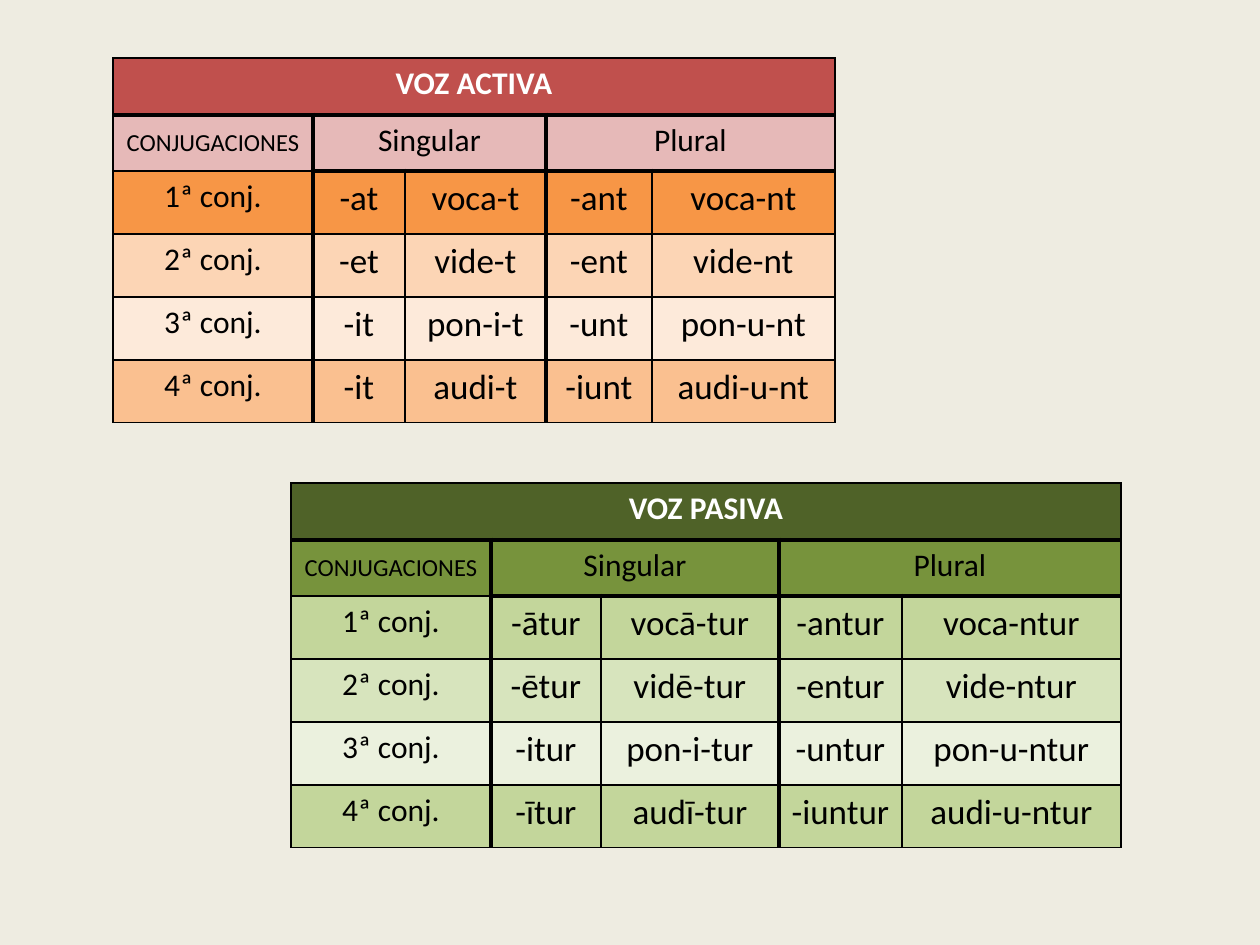
from dataclasses import dataclass

from lxml import etree
from pptx import Presentation
from pptx.dml.color import RGBColor
from pptx.enum.text import MSO_ANCHOR, PP_ALIGN
from pptx.oxml.ns import qn
from pptx.util import Emu, Pt

PX = 914400 // 126
CENTER = PP_ALIGN.CENTER
MIDDLE = MSO_ANCHOR.MIDDLE
FONT = "Calibri"
THIN, THICK = 1, 3
ROW_HEIGHTS = [57, 56, 63, 63, 63, 63]
HEADINGS = ["CONJUGACIONES", "Singular", "", "Plural", ""]

BLACK = RGBColor(0x00, 0x00, 0x00)
WHITE = RGBColor(0xFF, 0xFF, 0xFF)
CREAM = RGBColor(0xEE, 0xEC, 0xE1)
RED = RGBColor(0xC0, 0x50, 0x4D)
PINK = RGBColor(0xE6, 0xB9, 0xB8)
ORANGE = RGBColor(0xF7, 0x96, 0x46)
PEACH = RGBColor(0xFC, 0xD5, 0xB5)
PALE_PEACH = RGBColor(0xFD, 0xEA, 0xDA)
APRICOT = RGBColor(0xFA, 0xC0, 0x90)
DARK_GREEN = RGBColor(0x4F, 0x62, 0x28)
GREEN = RGBColor(0x77, 0x93, 0x3C)
LIGHT_GREEN = RGBColor(0xC3, 0xD6, 0x9B)
PALE_GREEN = RGBColor(0xD7, 0xE4, 0xBD)
MIST_GREEN = RGBColor(0xEB, 0xF1, 0xDE)


@dataclass
class Voice:
    title: str
    left: int
    top: int
    col_widths: list[int]
    row_fills: list[RGBColor]
    endings: list[list[str]]


VOICES = [
    Voice("VOZ ACTIVA", 113, 58, [200, 92, 141, 106, 183],
          [RED, PINK, ORANGE, PEACH, PALE_PEACH, APRICOT],
          [["-at", "voca-t", "-ant", "voca-nt"],
           ["-et", "vide-t", "-ent", "vide-nt"],
           ["-it", "pon-i-t", "-unt", "pon-u-nt"],
           ["-it", "audi-t", "-iunt", "audi-u-nt"]]),
    Voice("VOZ PASIVA", 291, 483, [200, 110, 178, 123, 219],
          [DARK_GREEN, GREEN, LIGHT_GREEN, PALE_GREEN, MIST_GREEN, LIGHT_GREEN],
          [["-ātur", "vocā-tur", "-antur", "voca-ntur"],
           ["-ētur", "vidē-tur", "-entur", "vide-ntur"],
           ["-itur", "pon-i-tur", "-untur", "pon-u-ntur"],
           ["-ītur", "audī-tur", "-iuntur", "audi-u-ntur"]]),
]


def px(n: int) -> Emu:
    return Emu(n * PX)


def vertical_weight(x: int, row: int) -> int:
    """Thick lines set off the singular and plural groups."""
    return THICK if x in (1, 3) and row > 0 else THIN


def horizontal_weight(y: int, col: int) -> int:
    """Thick lines close the title and the number headings."""
    return THICK if y == 1 or (y == 2 and col > 0) else THIN


def add_borders(cell, row: int, col: int) -> None:
    right = col + (cell.span_width if cell.is_merge_origin else 1)
    weights = {
        "a:lnL": vertical_weight(col, row),
        "a:lnR": vertical_weight(right, row),
        "a:lnT": horizontal_weight(row, col),
        "a:lnB": horizontal_weight(row + 1, col),
    }
    tc_pr = cell._tc.get_or_add_tcPr()
    for tag, weight in weights.items():
        ln = etree.SubElement(tc_pr, qn(tag), w=str(Pt(weight)))
        fill = etree.SubElement(ln, qn("a:solidFill"))
        etree.SubElement(fill, qn("a:srgbClr"), val=str(BLACK))


def font_size(row: int, col: int) -> int:
    if (row, col) == (1, 0):
        return 14
    return 20 if row > 1 and col > 0 else 18


def fill_cell(cell, text: str, row: int, col: int, color: RGBColor) -> None:
    add_borders(cell, row, col)
    cell.fill.solid()
    cell.fill.fore_color.rgb = color
    if (row, col) == (1, 0):
        cell.vertical_anchor = MIDDLE
    p = cell.text_frame.paragraphs[0]
    p.alignment = CENTER
    r = p.add_run()
    r.text = text
    r.font.name = FONT
    r.font.size = Pt(font_size(row, col))
    r.font.bold = row == 0
    r.font.color.rgb = WHITE if row == 0 else BLACK


def add_voice_table(slide, voice: Voice) -> None:
    widths = voice.col_widths
    table = slide.shapes.add_table(
        len(ROW_HEIGHTS), len(widths), px(voice.left), px(voice.top),
        px(sum(widths)), px(sum(ROW_HEIGHTS))).table
    table.first_row = table.horz_banding = False
    for column, width in zip(table.columns, widths):
        column.width = px(width)
    for table_row, height in zip(table.rows, ROW_HEIGHTS):
        table_row.height = px(height)

    # Title across the table, headings across two columns each
    for row, first, last in [(0, 0, 4), (1, 1, 2), (1, 3, 4)]:
        table.cell(row, first).merge(table.cell(row, last))

    # Texts, one row per conjugation
    texts = [[voice.title, "", "", "", ""], HEADINGS]
    texts += [[f"{n}ª conj.", *forms] for n, forms in enumerate(voice.endings, 1)]
    for row, (line, color) in enumerate(zip(texts, voice.row_fills)):
        for col, text in enumerate(line):
            cell = table.cell(row, col)
            if not cell.is_spanned:
                fill_cell(cell, text, row, col, color)


def main() -> None:
    prs = Presentation()
    prs.slide_width, prs.slide_height = px(1260), px(945)
    s = prs.slides.add_slide(prs.slide_layouts[6])

    # Background
    s.background.fill.solid()
    s.background.fill.fore_color.rgb = CREAM

    # Active and passive endings
    for voice in VOICES:
        add_voice_table(s, voice)
    prs.save("out.pptx")


if __name__ == "__main__":
    main()
